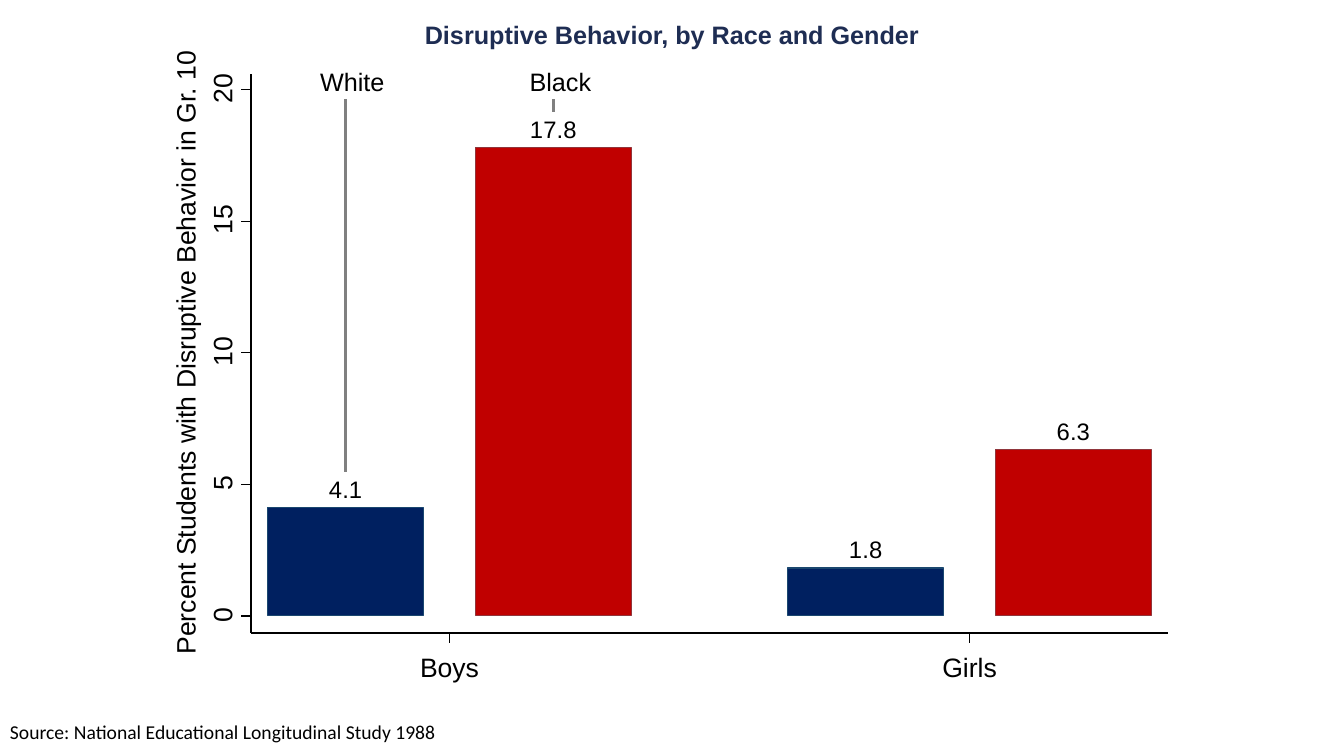
from dataclasses import dataclass

from lxml.etree import SubElement
from pptx import Presentation
from pptx.chart.data import CategoryChartData
from pptx.dml.color import RGBColor
from pptx.enum.chart import XL_CHART_TYPE as ChartType, XL_LABEL_POSITION as LabelPos
from pptx.enum.shapes import MSO_CONNECTOR as Connector
from pptx.enum.text import MSO_ANCHOR as Anchor, MSO_AUTO_SIZE as AutoSize, PP_ALIGN as Align
from pptx.oxml import parse_xml
from pptx.oxml.ns import nsdecls, qn
from pptx.util import Pt

BLACK = RGBColor(0x00, 0x00, 0x00)
GREY = RGBColor(0x80, 0x80, 0x80)
TITLE_BLUE = RGBColor(0x1E, 0x2D, 0x53)
NAVY = RGBColor(0x00, 0x20, 0x60)
NAVY_EDGE = RGBColor(0x1A, 0x47, 0x6F)
RED = RGBColor(0xC0, 0x00, 0x00)
RED_EDGE = RGBColor(0x90, 0x35, 0x3B)

# Axis geometry, in points
AXIS_X, AXIS_TOP, AXIS_Y, AXIS_RIGHT = 179.3, 52.6, 452.2, 834.5
ZERO_Y, UNIT, MAX_VALUE, STEP = 440, 18.8, 20, 5
FIRST_GROUP, GROUP_PITCH, BAR_OFFSET = 321.1, 371.5, 74.2
TICK = 7.2
GROUPS = ("Boys", "Girls")


@dataclass
class Race:
    name: str
    values: tuple[float, ...]
    fill: RGBColor
    edge: RGBColor
    leader_x: float
    leader_end: float
    label_x: float


@dataclass
class Label:
    text: str
    x: float
    y: float
    width: float
    size: float
    rotation: float = 0


@dataclass
class Line:
    x1: float
    y1: float
    x2: float
    y2: float
    color: RGBColor = BLACK
    width: float = 0.88


RACES = (
    Race("White", (4.1, 1.8), NAVY, NAVY_EDGE, FIRST_GROUP - BAR_OFFSET, 337, 251.6),
    Race("Black", (17.8, 6.3), RED, RED_EDGE, FIRST_GROUP + BAR_OFFSET, 79.9, 400.3),
)


def set_font(font, color: RGBColor, **values) -> None:
    for name, value in values.items():
        setattr(font, name, value)
    font.color.rgb = color


def add_line(s, line: Line) -> None:
    c = s.shapes.add_connector(
        Connector.STRAIGHT, Pt(line.x1), Pt(line.y1), Pt(line.x2), Pt(line.y2))
    c.line.color.rgb = line.color
    c.line.width = Pt(line.width)
    SubElement(c._element.spPr, qn("a:effectLst"))


def add_label(s, label: Label) -> None:
    """Place a label centred on its point."""
    height = label.size * 1.3
    sp = s.shapes.add_textbox(Pt(label.x - label.width / 2), Pt(label.y - height / 2),
                              Pt(label.width), Pt(height))
    sp.rotation = label.rotation
    tf = sp.text_frame
    frame = dict(word_wrap=False, vertical_anchor=Anchor.MIDDLE, margin_left=0,
                 margin_right=0, margin_top=0, margin_bottom=0)
    for name, value in frame.items():
        setattr(tf, name, value)
    p = tf.paragraphs[0]
    p.alignment = Align.CENTER
    r = p.add_run()
    r.text = label.text
    set_font(r.font, BLACK, name="Arial", size=Pt(label.size))


def add_title(s, text: str) -> None:
    sp = s.shapes.title
    sp.left, sp.top, sp.width, sp.height = Pt(0), Pt(10), Pt(960), Pt(29)
    tf = sp.text_frame
    tf.text = text
    tf.auto_size = AutoSize.NONE
    tf.vertical_anchor = Anchor.TOP
    p = tf.paragraphs[0]
    p.alignment = Align.CENTER
    set_font(p.runs[0].font, TITLE_BLUE, name="Arial", size=Pt(18), bold=True)


def add_bars(s) -> None:
    data = CategoryChartData(number_format="0.0")
    data.categories = GROUPS
    for race in RACES:
        data.add_series(race.name, race.values)
    height = MAX_VALUE * UNIT
    chart = s.shapes.add_chart(
        ChartType.COLUMN_CLUSTERED, Pt(FIRST_GROUP - GROUP_PITCH / 2), Pt(ZERO_Y - height),
        Pt(GROUP_PITCH * len(GROUPS)), Pt(height), data).chart
    chart.has_legend = chart.has_title = False
    set_font(chart.font, BLACK, name="Arial", size=Pt(17))

    # The plot fills the whole frame; the axes are drawn apart from it
    axis = chart.value_axis
    axis.minimum_scale, axis.maximum_scale, axis.major_unit = 0, MAX_VALUE, STEP
    axis.has_major_gridlines = False
    axis.visible = chart.category_axis.visible = False
    area = chart._chartSpace.chart.plotArea
    for old in area.findall(qn("c:layout")):
        area.remove(old)
    area.insert(0, parse_xml(
        f'<c:layout {nsdecls("c")}><c:manualLayout><c:layoutTarget val="inner"/>'
        '<c:xMode val="edge"/><c:yMode val="edge"/><c:x val="0"/><c:y val="0"/>'
        '<c:w val="1"/><c:h val="1"/></c:manualLayout></c:layout>'))

    plot = chart.plots[0]
    plot.vary_by_categories = False
    plot.gap_width, plot.overlap = 100, -33
    plot.has_data_labels = True
    labels = plot.data_labels
    labels.show_value = True
    labels.position = LabelPos.OUTSIDE_END
    labels.number_format, labels.number_format_is_linked = "0.0", False
    set_font(labels.font, BLACK, name="Arial", size=Pt(17))
    for series, race in zip(plot.series, RACES):
        series.format.fill.solid()
        series.format.fill.fore_color.rgb = race.fill
        series.format.line.color.rgb = race.edge
        series.format.line.width = Pt(0.88)


def add_axes(s) -> None:
    add_line(s, Line(AXIS_X, AXIS_Y, AXIS_X, AXIS_TOP))
    add_line(s, Line(AXIS_X, AXIS_Y, AXIS_RIGHT, AXIS_Y))
    for value in range(0, MAX_VALUE + 1, STEP):
        y = ZERO_Y - value * UNIT
        add_line(s, Line(AXIS_X, y, AXIS_X - TICK, y))
        add_label(s, Label(str(value), 158.4, y - 1, 30, 19, 270))
    for i, group in enumerate(GROUPS):
        x = FIRST_GROUP + i * GROUP_PITCH
        add_line(s, Line(x, AXIS_Y, x, AXIS_Y + TICK))
        add_label(s, Label(group, x, 476.3, 50, 19))
    add_label(s, Label("Percent Students with Disruptive Behavior in Gr. 10",
                       132.1, 252, 440, 19, 270))


def add_race_names(s) -> None:
    for race in RACES:
        add_line(s, Line(race.leader_x, race.leader_end, race.leader_x, 70.6, GREY, 1.75))
        add_label(s, Label(race.name, race.label_x, 58.3, 47, 18))


def add_source(s, text: str) -> None:
    tf = s.shapes.add_textbox(Pt(0), Pt(510.5), Pt(322), Pt(24.5)).text_frame
    tf.word_wrap = False
    r = tf.paragraphs[0].add_run()
    r.text = text
    set_font(r.font, BLACK, name="Calibri", size=Pt(14))


def main() -> None:
    prs = Presentation()
    prs.slide_width, prs.slide_height = Pt(960), Pt(540)
    s = prs.slides.add_slide(prs.slide_layouts[5])
    add_title(s, "Disruptive Behavior, by Race and Gender")
    add_bars(s)
    add_axes(s)
    add_race_names(s)
    add_source(s, "Source: National Educational Longitudinal Study 1988")
    prs.save("out.pptx")


if __name__ == "__main__":
    main()
